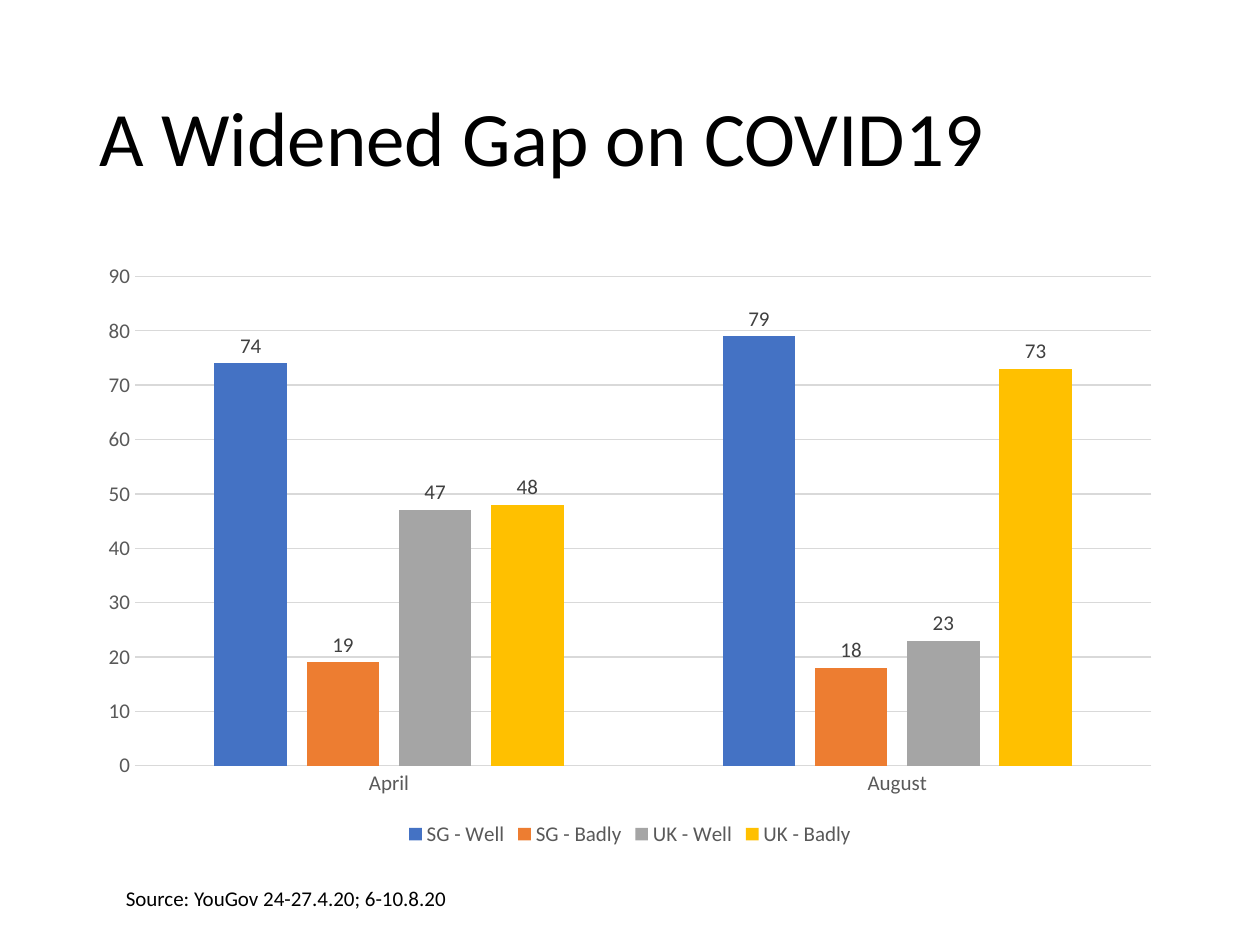
from pptx import Presentation
from pptx.chart.data import CategoryChartData as ChartData
from pptx.dml.color import RGBColor as RGB
from pptx.enum.chart import XL_CHART_TYPE as Kind, XL_LABEL_POSITION as Spot
from pptx.enum.chart import XL_LEGEND_POSITION as Side, XL_TICK_MARK as Tick
from pptx.enum.text import MSO_ANCHOR as Anchor, PP_ALIGN as Align
from pptx.util import Inches, Pt

TITLE = "A Widened Gap on COVID19"
SOURCE = "Source: YouGov 24-27.4.20; 6-10.8.20"
MONTHS = ["April", "August"]
SERIES = [
    ("SG - Well", (74, 79), "4472C4"),
    ("SG - Badly", (19, 18), "ED7D31"),
    ("UK - Well", (47, 23), "A5A5A5"),
    ("UK - Badly", (48, 73), "FFC000"),
]
COLORS = {"text": "000000", "axis": "595959", "label": "404040", "grid": "D9D9D9"}
FONT = "Calibri"
WIDE, HIGH = 10, 7.5
EDGE = 0.69
BODY = WIDE - 2 * EDGE


def style(font, size, color):
    font.name = FONT
    font.size = Pt(size)
    font.bold = False
    font.color.rgb = RGB.from_string(COLORS[color])


def rule(line):
    line.color.rgb = RGB.from_string(COLORS["grid"])
    line.width = Pt(0.75)


def add_title(slide):
    title = slide.shapes.title
    title.left, title.top, title.width, title.height = map(
        Inches, (EDGE, 0.4, BODY, 1.45))
    frame = title.text_frame
    frame.text = TITLE
    frame.vertical_anchor = Anchor.MIDDLE
    para = frame.paragraphs[0]
    para.alignment = Align.LEFT
    para.line_spacing = 0.9
    style(para.runs[0].font, 44, "text")


def add_bars(slide):
    data = ChartData()
    data.categories = MONTHS
    for name, vals, _ in SERIES:
        data.add_series(name, vals)
    box = map(Inches, (EDGE, 2, BODY, 4.76))
    chart = slide.shapes.add_chart(Kind.COLUMN_CLUSTERED, *box, data).chart
    style(chart.font, 10, "text")
    chart.has_title = False

    chart.has_legend = True
    chart.legend.position = Side.BOTTOM
    chart.legend.include_in_layout = False
    style(chart.legend.font, 12, "axis")

    months, scale = chart.category_axis, chart.value_axis
    for axis in (months, scale):
        axis.major_tick_mark = axis.minor_tick_mark = Tick.NONE
        style(axis.tick_labels.font, 12, "axis")
    rule(months.format.line)
    scale.format.line.fill.background()
    scale.minimum_scale, scale.maximum_scale, scale.major_unit = 0, 90, 10
    rule(scale.major_gridlines.format.line)

    plot = chart.plots[0]
    plot.gap_width, plot.overlap = 219, -27
    plot.vary_by_categories = False
    for bars, (_, _, color) in zip(plot.series, SERIES):
        bars.format.fill.solid()
        bars.format.fill.fore_color.rgb = RGB.from_string(color)
        labels = bars.data_labels
        labels.show_value = True
        labels.position = Spot.OUTSIDE_END
        style(labels.font, 12, "label")


def add_source(slide):
    box = slide.shapes.add_textbox(*map(Inches, (0.9, 6.98, 7.37, 0.3)))
    frame = box.text_frame
    frame.word_wrap = True
    frame.text = SOURCE
    style(frame.paragraphs[0].runs[0].font, 12, "text")


def main():
    deck = Presentation()
    deck.slide_width, deck.slide_height = Inches(WIDE), Inches(HIGH)
    slide = deck.slides.add_slide(deck.slide_layouts[5])
    add_title(slide)
    add_bars(slide)
    add_source(slide)
    deck.save("out.pptx")


if __name__ == "__main__":
    main()
